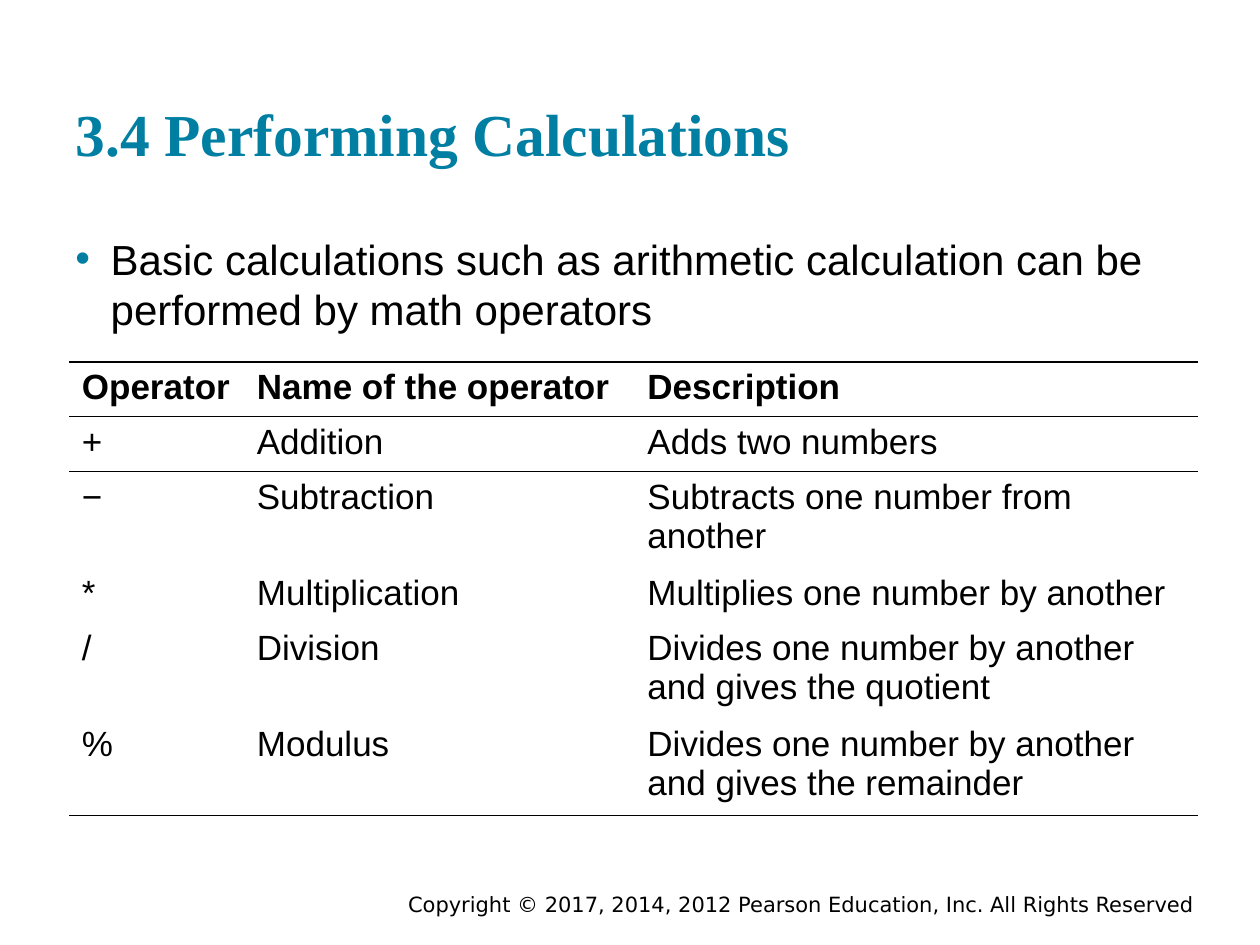
import pptx
import pptx.dml.color
import pptx.enum.text
import pptx.oxml
import pptx.oxml.ns
import pptx.util
from typing import NamedTuple

Pt = pptx.util.Pt
RGBColor = pptx.dml.color.RGBColor
Anchor = pptx.enum.text.MSO_ANCHOR
Align = pptx.enum.text.PP_ALIGN
qn = pptx.oxml.ns.qn

TEAL = RGBColor(0x00, 0x7F, 0xA3)
BLACK = RGBColor(0x00, 0x00, 0x00)
NO_STYLE = "{2D5ABB26-0587-4C30-8999-92F81FD0307C}"
COL_WIDTHS = (100, 223.2, 321.6)
ONE_LINE = 31.3
TWO_LINES = 55.1


class Row(NamedTuple):
    cells: tuple[str, str, str]
    height: float
    borders: str = ""
    bold: bool = False


ROWS = (
    Row(("Operator", "Name of the operator", "Description"), ONE_LINE, "TB", True),
    Row(("+", "Addition", "Adds two numbers"), ONE_LINE, "T"),
    Row(("−", "Subtraction", "Subtracts one number from another"), TWO_LINES),
    Row(("*", "Multiplication", "Multiplies one number by another"), ONE_LINE),
    Row(("/", "Division", "Divides one number by another and gives the quotient"), TWO_LINES),
    Row(("%", "Modulus", "Divides one number by another and gives the remainder"), TWO_LINES, "B"),
)


def style(p, font: str, size: float, color: RGBColor, bold: bool = False) -> None:
    for r in p.runs:
        r.font.name = font
        r.font.size = Pt(size)
        r.font.bold = bold
        r.font.color.rgb = color


def place(sp, left: float, top: float, width: float, height: float) -> None:
    sp.left, sp.top, sp.width, sp.height = Pt(left), Pt(top), Pt(width), Pt(height)


def set_frame(tf, anchor, inset: float) -> None:
    tf.word_wrap = True
    tf.auto_size = pptx.enum.text.MSO_AUTO_SIZE.NONE
    tf.vertical_anchor = anchor
    tf.margin_left = tf.margin_right = Pt(7.2)
    tf.margin_top = tf.margin_bottom = Pt(inset)


def add_title(s, text: str) -> None:
    sp = s.shapes.title
    place(sp, 36, 17.3, 648, 86.4)
    tf = sp.text_frame
    set_frame(tf, Anchor.BOTTOM, 7.2)
    tf.text = text
    p = tf.paragraphs[0]
    p.alignment = Align.LEFT
    style(p, "Times New Roman", 34, TEAL, True)


def add_text(s, box: tuple[float, float, float, float], text: str, anchor, inset: float):
    tf = s.shapes.add_textbox(*map(Pt, box)).text_frame
    set_frame(tf, anchor, inset)
    tf.text = text
    return tf.paragraphs[0]


def add_bullet(p, char: str, color: RGBColor, indent: float) -> None:
    pPr = p._p.get_or_add_pPr()
    pPr.set("marL", str(Pt(indent)))
    pPr.set("indent", str(-Pt(indent)))
    ns = pptx.oxml.ns.nsdecls("a")
    for xml in (
        f'<a:buClr {ns}><a:srgbClr val="{color}"/></a:buClr>',
        f'<a:buFont {ns} typeface="Arial"/>',
        f'<a:buChar {ns} char="{char}"/>',
    ):
        pPr.append(pptx.oxml.parse_xml(xml))


def add_borders(cell, sides: str) -> None:
    tcPr = cell._tc.get_or_add_tcPr()
    for i, side in enumerate(sides):
        tcPr.insert(i, pptx.oxml.parse_xml(
            f'<a:ln{side} {pptx.oxml.ns.nsdecls("a")} w="{Pt(1)}"><a:solidFill>'
            f'<a:srgbClr val="{BLACK}"/></a:solidFill></a:ln{side}>'))


def add_operator_table(s, rows: tuple[Row, ...], left: float, top: float) -> None:
    frame = s.shapes.add_table(
        len(rows), len(COL_WIDTHS), Pt(left), Pt(top),
        Pt(sum(COL_WIDTHS)), Pt(sum(row.height for row in rows)))
    table = frame.table
    table.horz_banding = False
    next(table._tbl.iter(qn("a:tableStyleId"))).text = NO_STYLE
    for column, width in zip(table.columns, COL_WIDTHS):
        column.width = Pt(width)
    for i, row in enumerate(rows):
        table.rows[i].height = Pt(row.height)
        for j, text in enumerate(row.cells):
            cell = table.cell(i, j)
            cell.text = text
            cell.fill.background()
            add_borders(cell, row.borders)
            style(cell.text_frame.paragraphs[0], "Arial", 20, BLACK, row.bold)


def main() -> None:
    prs = pptx.Presentation()
    prs.slide_width, prs.slide_height = Pt(720), Pt(540)
    s = prs.slides.add_slide(prs.slide_layouts[5])

    add_title(s, "3.4 Performing Calculations")

    p = add_text(
        s, (36, 126, 648, 72.7),
        "Basic calculations such as arithmetic calculation can be performed by math operators",
        Anchor.TOP, 7.2)
    add_bullet(p, "•", TEAL, 20.2)
    style(p, "Arial", 24, BLACK)

    add_operator_table(s, ROWS, 39.6, 206.8)

    p = add_text(
        s, (210.2, 507.6, 479.5, 18),
        "Copyright © 2017, 2014, 2012 Pearson Education, Inc. All Rights Reserved",
        Anchor.MIDDLE, 3.6)
    p.alignment = Align.RIGHT
    style(p, "DejaVu Sans", 12, BLACK)

    prs.save("out.pptx")


if __name__ == "__main__":
    main()
